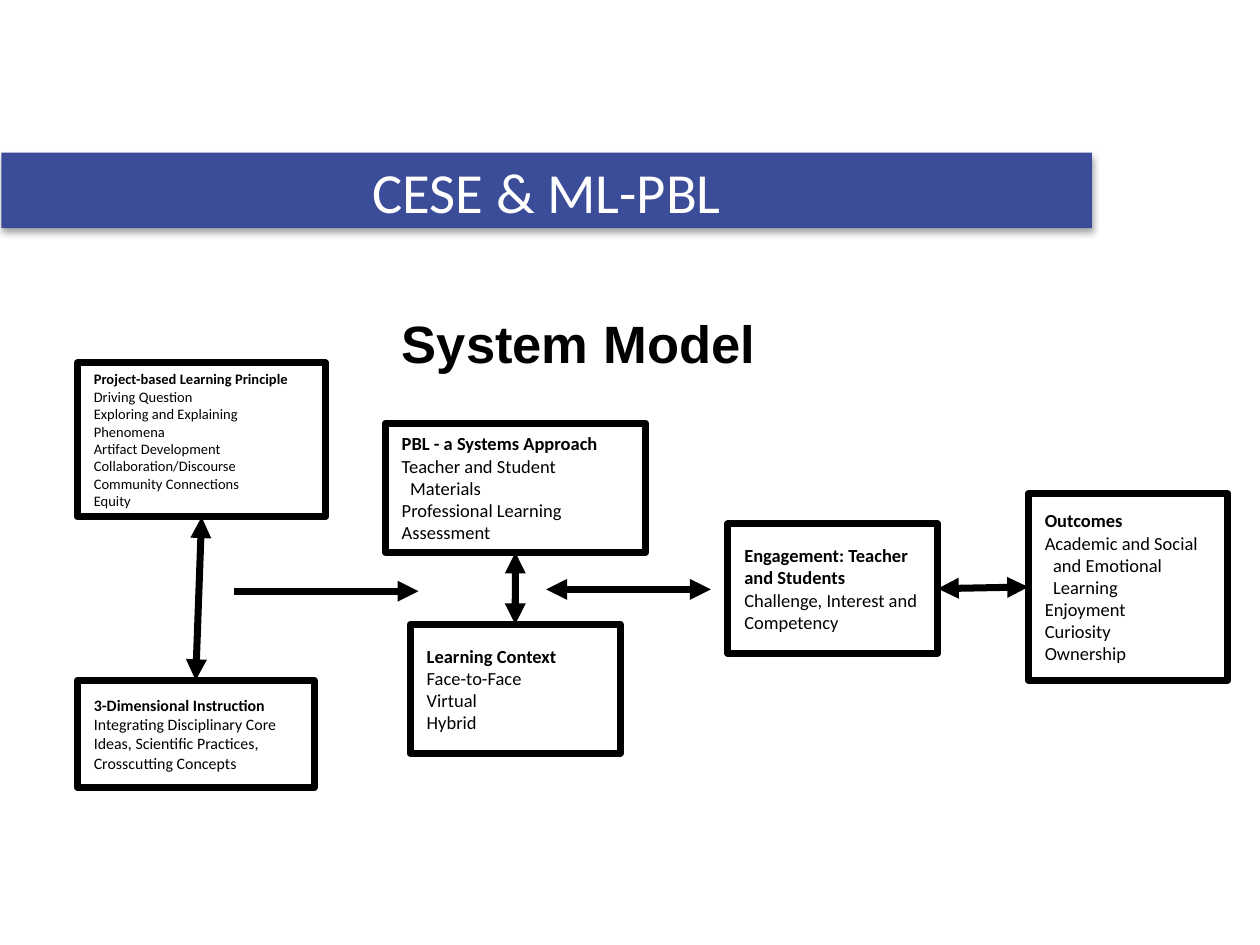
from lxml.etree import SubElement
from pptx import Presentation
from pptx.dml.color import RGBColor
from pptx.enum.shapes import MSO_CONNECTOR as CONN, MSO_SHAPE as SHAPE
from pptx.enum.text import MSO_ANCHOR as ANCHOR, PP_ALIGN as ALIGN
from pptx.oxml.ns import qn
from pptx.util import Pt

BLUE = RGBColor(0x3B, 0x4C, 0x98)
BLACK = RGBColor(0, 0, 0)
WHITE = RGBColor(0xFF, 0xFF, 0xFF)
TOP, LEFT, BOTTOM, RIGHT = range(4)

# name: (x, y, w, h), size, lines, indexes of the indented lines
BOXES = {
    "principle": ((0, 26, 106.6, 66), 6.2,
                  ["Project-based Learning Principle", "Driving Question",
                   "Exploring and Explaining Phenomena", "Artifact Development",
                   "Collaboration/Discourse", "Community Connections", "Equity"], ()),
    "instruction": ((0, 162, 101.5, 46), 6.8,
                    ["3-Dimensional Instruction",
                     "Integrating Disciplinary Core Ideas, Scientific Practices, "
                     "Crosscutting Concepts"], ()),
    "outcomes": ((407.6, 82, 85.6, 80), 7.9,
                 ["Outcomes", "Academic and Social", "and Emotional", "Learning",
                  "Enjoyment", "Curiosity", "Ownership"], (2, 3)),
    "engagement": ((278.8, 95, 90, 55.4), 7.9,
                   ["Engagement: Teacher and Students",
                    "Challenge, Interest and Competency"], ()),
    "context": ((142.7, 138, 90, 55.4), 7.9,
                ["Learning Context", "Face-to-Face", "Virtual", "Hybrid"], ()),
    "approach": ((132, 51.8, 111.6, 55.4), 7.9,
                 ["PBL - a Systems Approach", "Teacher and Student", "Materials",
                  "Professional Learning", "Assessment"], (2,)),
}
LINKS = [("principle", BOTTOM, "instruction", TOP),
         ("approach", BOTTOM, "context", TOP),
         ("engagement", RIGHT, "outcomes", LEFT)]


def set_font(p, name, size, color, bold=False):
    """Format every run of a paragraph."""
    for r in p.runs:
        r.font.name, r.font.size, r.font.bold = name, Pt(size), bold
        r.font.color.rgb = color


def add_rect(slide, x, y, w, h, fill):
    """Add a filled rectangle without effects."""
    sp = slide.shapes.add_shape(SHAPE.RECTANGLE, Pt(x), Pt(y), Pt(w), Pt(h))
    sp.shadow.inherit = False
    sp.fill.solid()
    sp.fill.fore_color.rgb = fill
    sp.text_frame.vertical_anchor = ANCHOR.MIDDLE
    return sp


def add_arrow(slide, x1, y1, x2, y2, ends=("headEnd", "tailEnd")):
    """Add a black line with triangles at the named ends."""
    cxn = slide.shapes.add_connector(CONN.STRAIGHT, Pt(x1), Pt(y1), Pt(x2), Pt(y2))
    cxn.line.color.rgb = BLACK
    cxn.line.width = Pt(3)
    for end in ends:
        SubElement(cxn.line._get_or_add_ln(), qn(f"a:{end}"), type="triangle")
    SubElement(cxn._element.spPr, qn("a:effectLst"))
    return cxn


def add_title_bar(slide, x, y, w, h):
    """Draw the blue title bar with its soft shadow."""
    sp = add_rect(slide, x, y, w, h, BLUE)
    sp.line.fill.background()
    effects = sp._element.spPr.find(qn("a:effectLst"))
    shadow = SubElement(effects, qn("a:outerShdw"), blurRad=str(Pt(3.1)),
                        dist=str(Pt(1.8)), dir="5400000", rotWithShape="0")
    color = SubElement(shadow, qn("a:srgbClr"), val=str(BLACK))
    SubElement(color, qn("a:alpha"), val="35000")
    p = sp.text_frame.paragraphs[0]
    p.text = "CESE & ML-PBL"
    p.alignment = ALIGN.CENTER
    set_font(p, "Calibri", 24.3, WHITE)


def add_heading(slide, x, y, w, h):
    """Place the heading of the model."""
    tf = slide.shapes.add_textbox(Pt(x), Pt(y), Pt(w), Pt(h)).text_frame
    tf.word_wrap = True
    tf.text = "System Model"
    set_font(tf.paragraphs[0], "Arial", 22.5, BLACK, True)


def add_model_box(slide, x, y, w, h, size, lines, indented):
    """Draw one outlined box with a bold first line."""
    sp = add_rect(slide, x, y, w, h, WHITE)
    sp.line.color.rgb = BLACK
    sp.line.width = Pt(3)
    tf = sp.text_frame
    tf.text = "\n".join(lines)
    for i, p in enumerate(tf.paragraphs):
        p.alignment = ALIGN.LEFT
        if i in indented:
            p._p.get_or_add_pPr().set("marL", str(Pt(3.6)))
        set_font(p, "Calibri", size, BLACK, i == 0)
    return sp


def add_system_model(slide, x, y):
    """Draw the heading, boxes and arrows from the given corner."""
    add_heading(slide, x + 132, y, 170, 34.6)
    boxes = {name: add_model_box(slide, x + dx, y + dy, w, h, size, lines, indented)
             for name, ((dx, dy, w, h), size, lines, indented) in BOXES.items()}
    for start, start_side, end, end_side in LINKS:
        cxn = add_arrow(slide, x, y, x, y)
        cxn.begin_connect(boxes[start], start_side)
        cxn.end_connect(boxes[end], end_side)
    add_arrow(slide, x + 201, y + 123, x + 271.6, y + 123)
    add_arrow(slide, x + 67, y + 123.8, x + 146.3, y + 123.8, ["tailEnd"])


def main():
    """Build and save the slide."""
    prs = Presentation()
    prs.slide_width, prs.slide_height = Pt(540), Pt(405)
    slide = prs.slides.add_slide(prs.slide_layouts[6])
    add_title_bar(slide, 0.6, 65.4, 467.4, 32.4)
    add_system_model(slide, 33.1, 129.6)
    prs.save("out.pptx")


if __name__ == "__main__":
    main()
